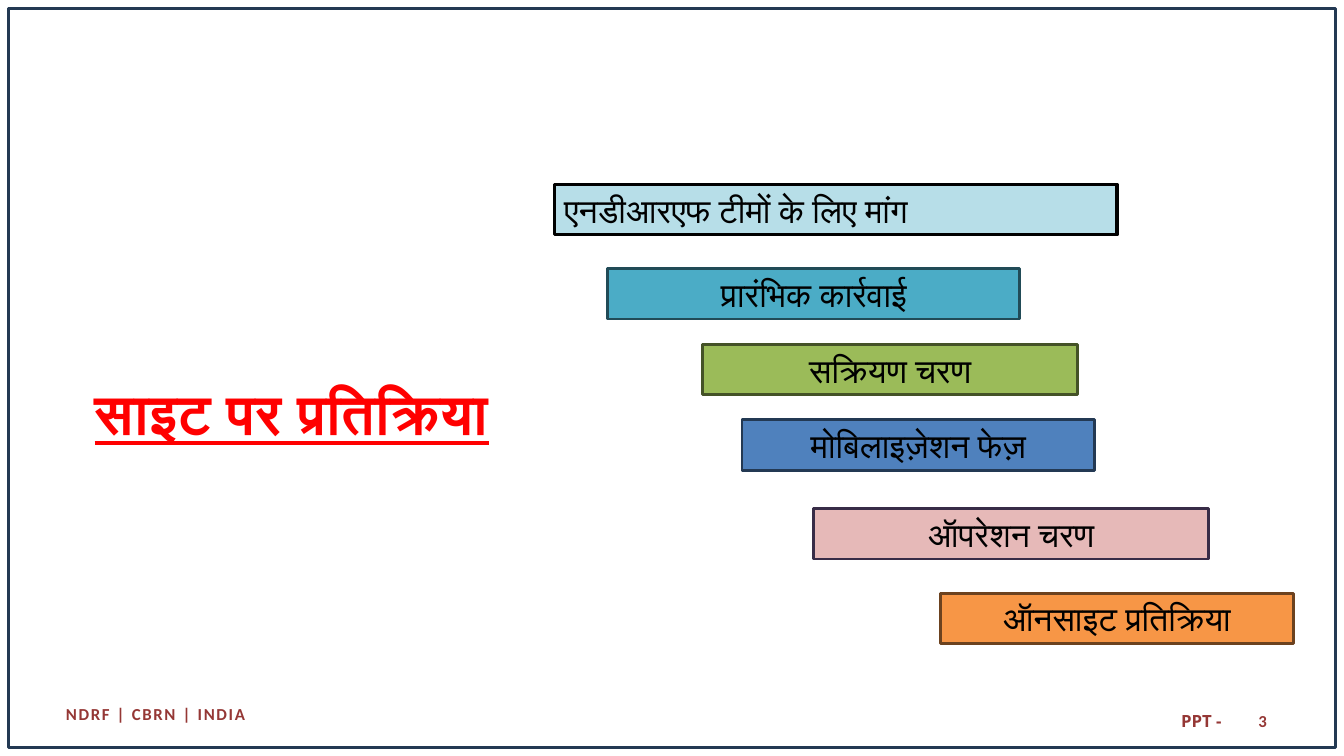
"""Build the site response slide with its staircase of phases."""
from pptx import Presentation
from pptx.dml.color import RGBColor
from pptx.enum import shapes, text
from pptx.util import Cm, Pt

TITLE = "साइट पर प्रतिक्रिया"
PHASES = [
    ("एनडीआरएफ टीमों के लिए मांग", 13.97, 4.65, 14.18, "B7DEE8", "000000", 2.25),
    ("प्रारंभिक कार्रवाई", 15.32, 6.77, 10.38, "4BACC6", "214B57", 2),
    ("सक्रियण चरण", 17.71, 8.68, 9.45, "9BBB59", "445227", 2),
    ("मोबिलाइज़ेशन फेज़", 18.7, 10.58, 8.89, "4F81BD", "233953", 2),
    ("ऑपरेशन चरण", 20.5, 12.82, 9.96, "E6B9B8", "382C47", 2),
    ("ऑनसाइट प्रतिक्रिया", 23.7, 14.95, 8.89, "F79646", "6C421F", 2),
]
PHASE_HEIGHT = 1.27
FOOTERS = [
    ("3", (24.28, 17.65, 7.9, 1.02), "Calibri", "RIGHT", "MIDDLE", 0.25, 0.13, 0),
    ("NDRF | CBRN | INDIA", (0.43, 17.51, 6.99, 0.94), "Calibri", "CENTER", "TOP", 0.23, 0.23, 120),
    ("PPT -", (29.54, 17.68, 1.47, 0.94), "Open Sans", "CENTER", "TOP", 0, 0.23, 0),
]
FRAME = (0.21, 0.21, 33.45, 18.62)


def color(value):
    return RGBColor.from_string(value)


def write(tf, words, font, size, ink, align="CENTER", anchor="MIDDLE", bold=False):
    tf.vertical_anchor = text.MSO_ANCHOR[anchor]
    p = tf.paragraphs[0]
    p.alignment = text.PP_ALIGN[align]
    r = p.add_run()
    r.text = words
    r.font.name, r.font.size, r.font.bold = font, Pt(size), bold
    r.font.color.rgb = color(ink)
    return r


def add_box(s, place, fill, line, weight):
    sp = s.shapes.add_shape(shapes.MSO_SHAPE.RECTANGLE, *map(Cm, place))
    sp.shadow.inherit = False
    if fill:
        sp.fill.solid()
        sp.fill.fore_color.rgb = color(fill)
    else:
        sp.fill.background()
    sp.line.color.rgb = color(line)
    sp.line.width = Pt(weight)
    return sp


def add_footer(s, words, place, font, align, anchor, side, top, spacing):
    tf = s.shapes.add_textbox(*map(Cm, place)).text_frame
    tf.word_wrap = True
    tf.margin_left = tf.margin_right = Cm(side)
    tf.margin_top = tf.margin_bottom = Cm(top)
    r = write(tf, words, font, 12, "953735", align, anchor, True)
    if spacing:
        r.font._element.set("spc", str(spacing))


def add_title(s):
    sp = s.shapes.title
    sp.left, sp.top, sp.width, sp.height = map(Cm, (-1.07, 8.79, 16.84, 3.18))
    sp.text_frame.auto_size = text.MSO_AUTO_SIZE.NONE
    r = write(sp.text_frame, TITLE, "Open Sans", 40, "FF0000", bold=True)
    r.font.underline = True


def main():
    prs = Presentation()
    prs.slide_width, prs.slide_height = Cm(33.87), Cm(19.05)
    s = prs.slides.add_slide(prs.slide_layouts[5])
    for footer in FOOTERS:
        add_footer(s, *footer)
    add_title(s)
    add_box(s, FRAME, None, "233953", 2)
    for i, (words, left, top, width, fill, line, weight) in enumerate(PHASES):
        sp = add_box(s, (left, top, width, PHASE_HEIGHT), fill, line, weight)
        style = ("Calibri", 24, "000000") if i else ("Open Sans", 24, "000000", "LEFT", "TOP")
        write(sp.text_frame, words, *style)
    prs.save("out.pptx")


if __name__ == "__main__":
    main()
